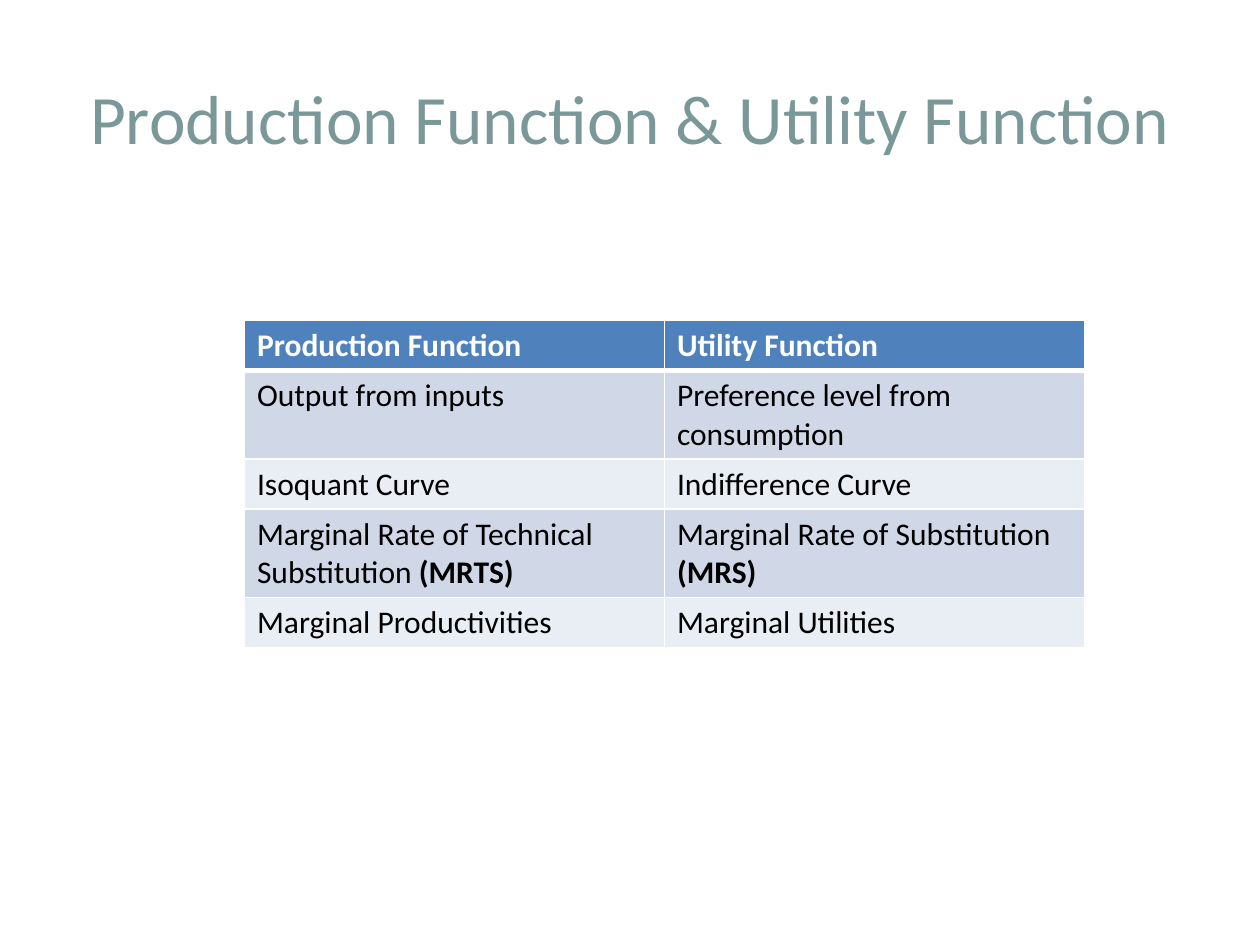
from lxml import etree
from pptx import Presentation, util as u
from pptx.dml.color import RGBColor
from pptx.enum import text
from pptx.oxml.ns import qn

TEAL = RGBColor(0x7B, 0x98, 0x99)
WHITE = RGBColor(0xFF, 0xFF, 0xFF)
BLACK = RGBColor(0, 0, 0)
HEADER = RGBColor(0x4F, 0x81, 0xBD)
BANDS = (RGBColor(0xD0, 0xD8, 0xE8), RGBColor(0xE9, 0xED, 0xF4))

WIDTH, HEIGHT = u.Inches(10), u.Inches(7.5)
TITLE_BOX = (0.05, 0.04, 0.9, 0.1667)
TABLE_BOX = (0.194, 0.3387, 0.6667, 0.27)

ROWS = [
    [[("Production Function", True)], [("Utility Function", True)]],
    [[("Output from inputs", False)], [("Preference level from consumption", False)]],
    [[("Isoquant Curve", False)], [("Indifference Curve", False)]],
    [[("Marginal Rate of Technical Substitution ", False), ("(MRTS)", True)],
     [("Marginal Rate of Substitution ", False), ("(MRS)", True)]],
    [[("Marginal Productivities", False)], [("Marginal Utilities", False)]],
]


def place(box):
    """Turn shares of the slide into lengths."""
    return [int(share * side) for share, side in zip(box, (WIDTH, HEIGHT) * 2)]


def add_span(para, words, color, **format_values):
    """Add a formatted run to a paragraph."""
    span = para.add_run()
    span.text = words
    for name, value in {"name": "Calibri", **format_values}.items():
        setattr(span.font, name, value)
    span.font.color.rgb = color


def add_title(page, box, words):
    """Place the centred slide title."""
    frame = page.shapes.add_textbox(*place(box)).text_frame
    for name, value in {"word_wrap": True, "vertical_anchor": text.MSO_ANCHOR.MIDDLE}.items():
        setattr(frame, name, value)
    para = frame.paragraphs[0]
    para.alignment = text.PP_ALIGN.CENTER
    add_span(para, words, TEAL, size=u.Pt(39.6))


def set_borders(cell, top, bottom):
    """Draw white cell borders with the given top and bottom weights."""
    properties = cell._tc.get_or_add_tcPr()
    for side, points in {"L": 1, "R": 1, "T": top, "B": bottom}.items():
        line = etree.SubElement(properties, qn(f"a:ln{side}"), w=str(u.Pt(points)))
        fill = etree.SubElement(line, qn("a:solidFill"))
        etree.SubElement(fill, qn("a:srgbClr"), val=str(WHITE))


def add_comparison(page, box, rows):
    """Place the banded comparison table under its header row."""
    table = page.shapes.add_table(len(rows), len(rows[0]), *place(box)).table
    for index, row in enumerate(rows):
        table.rows[index].height = int(place(box)[3] / len(rows) / 1.3)
        color, shade = (BLACK, BANDS[(index - 1) % 2]) if index else (WHITE, HEADER)
        for column, spans in enumerate(row):
            cell = table.cell(index, column)
            set_borders(cell, 3 if index == 1 else 1, 1 if index else 3)
            cell.fill.solid()
            cell.fill.fore_color.rgb = shade
            for words, bold in spans:
                add_span(cell.text_frame.paragraphs[0], words, color, size=u.Pt(18), bold=bold)


def main():
    """Build and save the deck."""
    deck = Presentation()
    deck.slide_width, deck.slide_height = WIDTH, HEIGHT
    page = deck.slides.add_slide(deck.slide_layouts[6])
    add_title(page, TITLE_BOX, "Production Function & Utility Function")
    add_comparison(page, TABLE_BOX, ROWS)
    deck.save("out.pptx")


if __name__ == "__main__":
    main()
